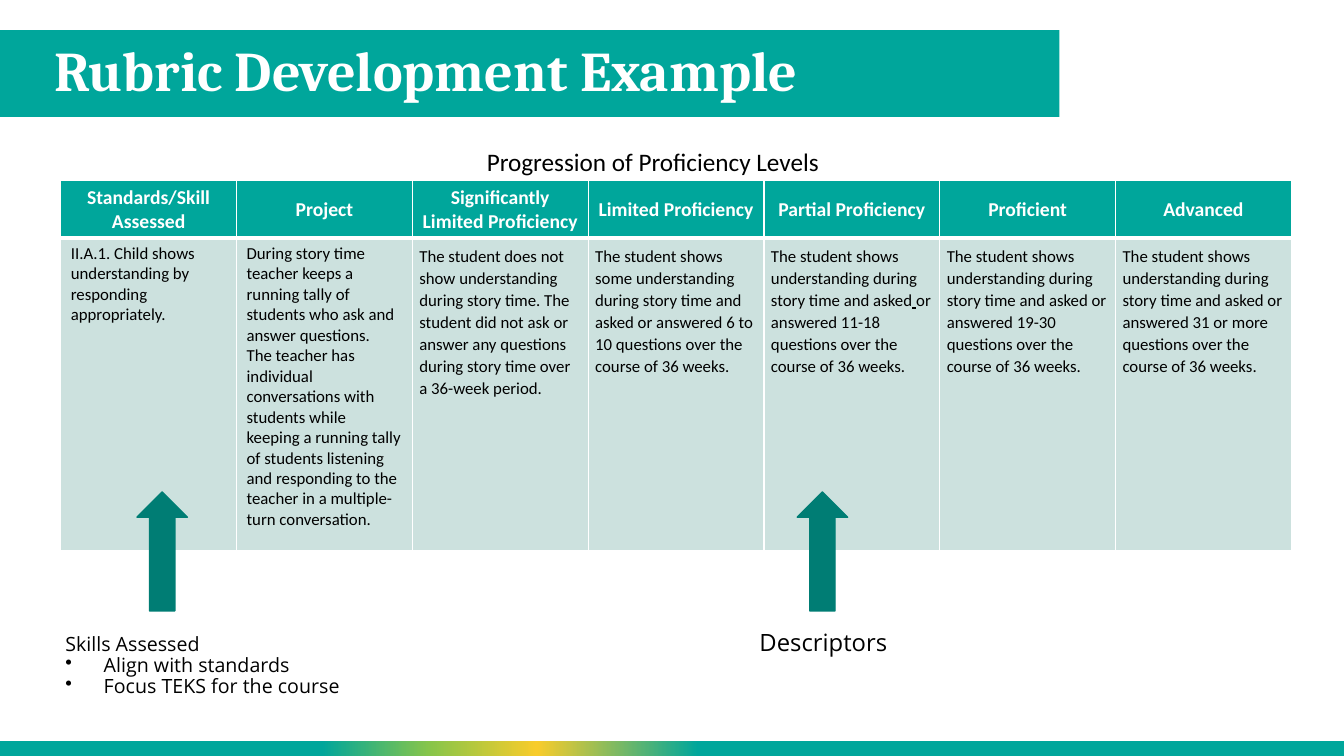
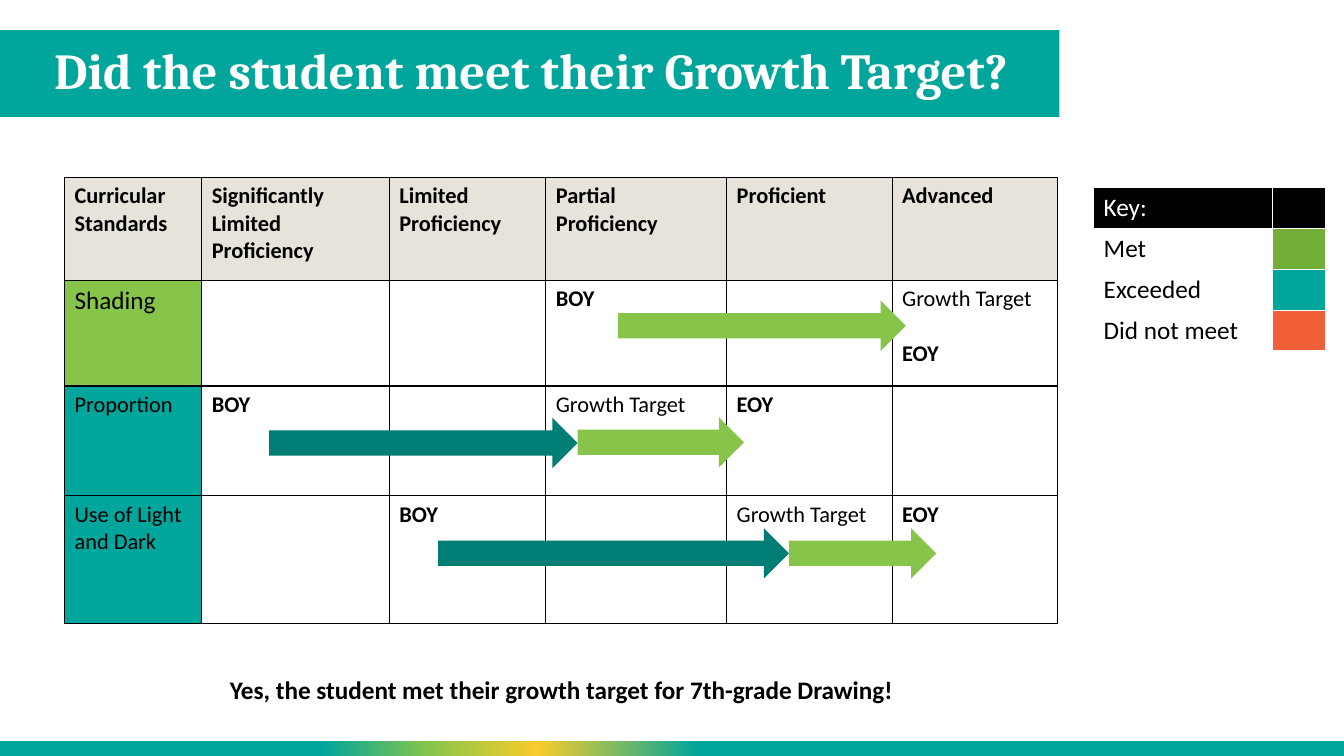
from lxml.etree import SubElement
from pptx import Presentation
from pptx.dml.color import RGBColor
from pptx.enum.shapes import MSO_SHAPE
from pptx.enum.text import MSO_ANCHOR, PP_ALIGN
from pptx.oxml.ns import qn
from pptx.util import Pt

TEAL, DARK_TEAL, GREEN, YELLOW = "00A69B", "007D74", "87C54A", "F8CC2B"
PALE_TEAL, SAND, MET_GREEN, ORANGE = "CCE1DE", "E7E3DB", "73AE38", "F16038"
BLACK, WHITE = "000000", "FFFFFF"

SLIDE_SIZE = (960, 540)
TITLE_BAND = (-0.7, 21.6, 757.4, 61.9)
TITLE_BOX = (31.7, 21.6, 724.3, 61.9)
FOOTER_BAND = (-0.7, 529.2, 960.7, 10.8)
FOOTER_STOPS = [(0, TEAL), (24, TEAL), (32, GREEN), (40, YELLOW), (52, TEAL), (100, TEAL)]

TITLE_STYLE = {"name": "Cambria", "bold": True, "color": WHITE, "line_spacing": 0.9}
BODY = {"name": "Calibri", "color": BLACK}
NOTE = {"name": "Open Sans", "color": BLACK, "line_spacing": 0.9}

# Rubric slide
RUBRIC = [
    ("Standards/Skill Assessed",
     ["II.A.1. Child shows understanding by responding appropriately."]),
    ("Project",
     ["During story time teacher keeps a running tally of students who ask and answer questions.",
      "The teacher has individual conversations with students while keeping a running tally of "
      "students listening and responding to the teacher in a multiple-turn conversation."]),
    ("Significantly Limited Proficiency",
     ["The student does not show understanding during story time. The student did not ask or "
      "answer any questions during story time over a 36-week period."]),
    ("Limited Proficiency",
     ["The student shows some understanding during story time and asked or answered 6 to 10 "
      "questions over the course of 36 weeks."]),
    ("Partial Proficiency",
     [{"runs": [("The student shows understanding during story time and asked", {}),
                (" ", {"underline": True}),
                ("or answered 11-18 questions over the course of 36 weeks.", {})]}]),
    ("Proficient",
     ["The student shows understanding during story time and asked or answered 19-30 "
      "questions over the course of 36 weeks."]),
    ("Advanced",
     ["The student shows understanding during story time and asked or answered 31 or more "
      "questions over the course of 36 weeks."]),
]
DESCRIPTOR_START = 2
SKILLS = ["Skills Assessed",
          {"text": "Align with standards", "bullet": True},
          {"text": "Focus TEKS for the course", "bullet": True}]
POINTER_LEFTS = [569.5, 97.9]

# Growth slide
LEVELS = ["Curricular Standards", "Significantly Limited Proficiency", "Limited Proficiency",
          "Partial Proficiency", "Proficient", "Advanced"]
LEVEL_WIDTHS = [98, 134, 111.8, 129.2, 118.2, 118.2]
BOY, EOY = {"text": "BOY", "bold": True}, {"text": "EOY", "bold": True}
TARGET = "Growth Target"
GROWTH = [  # standard, fill, {column: paragraphs}
    ({"text": "Shading", "size": 18}, GREEN,
     {3: [BOY], 5: [TARGET, {**EOY, "space_before": 19.5}]}),
    ("Proportion", TEAL, {1: [BOY], 3: [TARGET], 4: [EOY]}),
    ("Use of Light and Dark", TEAL, {2: [BOY], 4: [TARGET], 5: [EOY]}),
]
KEY = [("Met", MET_GREEN), ("Exceeded", TEAL), ("Did not meet", ORANGE)]
GROWTH_ARROWS = [  # left, top, width, fill
    (441.3, 214.7, 205.8, GREEN),
    (192.3, 298.4, 220.3, DARK_TEAL),
    (412.6, 298, 118.8, GREEN),
    (313, 377.3, 250.6, DARK_TEAL),
    (563.6, 377.3, 105.2, GREEN),
]


def rgb(color):
    return RGBColor.from_string(color)


def points(values):
    return [Pt(value) for value in values]


def add_bullet(paragraph, indent=27.4):
    properties = paragraph._p.get_or_add_pPr()
    properties.set("marL", str(Pt(indent)))
    properties.set("indent", str(-Pt(indent)))
    SubElement(properties, qn("a:buChar")).set("char", "•")


def format_run(run, style):
    for key in ("name", "bold", "underline"):
        if key in style:
            setattr(run.font, key, style[key])
    run.font.size = Pt(style["size"])
    run.font.color.rgb = rgb(style["color"])


def write(frame, paragraphs, style):
    """Fill a frame; a paragraph is a string or a dict with its own format values."""
    for index, content in enumerate(paragraphs):
        if isinstance(content, str):
            content = {"text": content}
        look = {**style, **content}
        paragraph = frame.add_paragraph() if index else frame.paragraphs[0]
        for key in ("alignment", "line_spacing"):
            if key in look:
                setattr(paragraph, key, look[key])
        if "space_before" in look:
            paragraph.space_before = Pt(look["space_before"])
        if "bullet" in look:
            add_bullet(paragraph)
        for text, extra in look.get("runs") or [(look["text"], {})]:
            run = paragraph.add_run()
            run.text = text
            format_run(run, {**look, **extra})


def add_text(slide, box, paragraphs, style, anchor=MSO_ANCHOR.MIDDLE):
    frame = slide.shapes.add_textbox(*points(box)).text_frame
    frame.word_wrap = True
    frame.vertical_anchor = anchor
    write(frame, paragraphs, style)


def add_block(slide, kind, box, fill, outline=None):
    block = slide.shapes.add_shape(kind, *points(box))
    block.shadow.inherit = False
    block.fill.solid()
    block.fill.fore_color.rgb = rgb(fill)
    if outline:
        block.line.color.rgb = rgb(outline)
        block.line.width = Pt(1)
    else:
        block.line.fill.background()
    return block


def blend(block, stops):
    """Give a block a left-to-right gradient."""
    block.fill.gradient()
    block.fill.gradient_angle = 0
    stop_list = block._element.spPr.find(qn("a:gradFill")).find(qn("a:gsLst"))
    for stop in list(stop_list):
        stop_list.remove(stop)
    for percent, color in stops:
        stop = SubElement(stop_list, qn("a:gs"), pos=str(percent * 1000))
        SubElement(stop, qn("a:srgbClr"), val=color)


def set_borders(cell, color, widths):
    properties = cell._tc.get_or_add_tcPr()
    for side in "LRTB":
        line = SubElement(properties, qn(f"a:ln{side}"), w=str(Pt(widths.get(side, 1))))
        SubElement(SubElement(line, qn("a:solidFill")), qn("a:srgbClr"), val=color)


def add_grid(slide, corner, widths, heights, rows, border, header_rule=1):
    """Draw a table from rows of (paragraphs, fill, style) cells."""
    box = (*corner, sum(widths), sum(heights))
    table = slide.shapes.add_table(len(rows), len(widths), *points(box)).table
    table.first_row = table.horz_banding = False
    for column, width in zip(table.columns, widths):
        column.width = Pt(width)
    for row, height in zip(table.rows, heights):
        row.height = Pt(height)
    for r, row in enumerate(rows):
        rule = {0: {"B": header_rule}, 1: {"T": header_rule}}.get(r, {})
        for c, (paragraphs, fill, style) in enumerate(row):
            cell = table.cell(r, c)
            set_borders(cell, border, rule)
            if fill:
                cell.fill.solid()
                cell.fill.fore_color.rgb = rgb(fill)
            else:
                cell.fill.background()
            if "anchor" in style:
                cell.vertical_anchor = style["anchor"]
            if "margin" in style:
                for side in ("left", "top", "right", "bottom"):
                    setattr(cell, f"margin_{side}", Pt(style["margin"]))
            write(cell.text_frame, paragraphs, style)


def start_slide(deck, title, size):
    slide = deck.slides.add_slide(deck.slide_layouts[6])
    add_block(slide, MSO_SHAPE.RECTANGLE, TITLE_BAND, TEAL)
    blend(add_block(slide, MSO_SHAPE.RECTANGLE, FOOTER_BAND, TEAL), FOOTER_STOPS)
    add_text(slide, TITLE_BOX, [title], {**TITLE_STYLE, "size": size})
    return slide


def build_rubric(deck):
    slide = start_slide(deck, "Rubric Development Example", 40)
    add_text(slide, (340.6, 100.8, 278, 28.8), ["Progression of Proficiency Levels"],
             {**BODY, "size": 18}, MSO_ANCHOR.TOP)
    heading = {**BODY, "size": 14, "bold": True, "color": WHITE,
               "alignment": PP_ALIGN.CENTER, "anchor": MSO_ANCHOR.MIDDLE}
    plain = {**BODY, "size": 12}
    descriptor = {**plain, "line_spacing": 1.07, "margin": 5}
    rows = [[([name], TEAL, heading) for name, _ in RUBRIC],
            [(text, PALE_TEAL, descriptor if index >= DESCRIPTOR_START else plain)
             for index, (_, text) in enumerate(RUBRIC)]]
    add_grid(slide, (43.4, 129.2), [125.6] * len(RUBRIC), [41, 223.4], rows, WHITE, 3)
    add_text(slide, (39.6, 442.8, 214.6, 66.2), SKILLS, {**NOTE, "size": 14})
    add_text(slide, (527, 427, 122.4, 66.2), ["Descriptors"],
             {**NOTE, "size": 17, "alignment": PP_ALIGN.CENTER})
    for left in POINTER_LEFTS:
        add_block(slide, MSO_SHAPE.UP_ARROW, (left, 351.4, 36, 85), DARK_TEAL, DARK_TEAL)


def build_growth(deck):
    slide = start_slide(deck, "Did the student meet their Growth Target?", 36)
    plain = {**BODY, "size": 16}
    rows = [[([level], SAND, {**plain, "bold": True}) for level in LEVELS]]
    for standard, fill, marks in GROWTH:
        rows.append([([standard], fill, plain)]
                    + [(marks.get(c, []), None, plain) for c in range(1, len(LEVELS))])
    add_grid(slide, (46.1, 126.8), LEVEL_WIDTHS, [73.4, 75.6, 78.3, 91.4], rows, BLACK)

    label = {**BODY, "size": 18}
    key_rows = [[(["Key:"], BLACK, {**label, "color": WHITE}), ([], BLACK, label)]]
    key_rows += [[([name], None, label), ([], fill, label)] for name, fill in KEY]
    add_grid(slide, (781.2, 134), [128, 38], [29.2] * len(key_rows), key_rows, WHITE)

    add_text(slide, (46.1, 466.6, 710, 51.8),
             ["Yes, the student met their growth target for 7th-grade Drawing!"],
             {**label, "bold": True, "alignment": PP_ALIGN.CENTER})
    for left, top, width, fill in GROWTH_ARROWS:
        add_block(slide, MSO_SHAPE.RIGHT_ARROW, (left, top, width, 36), fill)


def main():
    deck = Presentation()
    deck.slide_width, deck.slide_height = points(SLIDE_SIZE)
    build_rubric(deck)
    build_growth(deck)
    deck.save("out.pptx")


if __name__ == "__main__":
    main()
